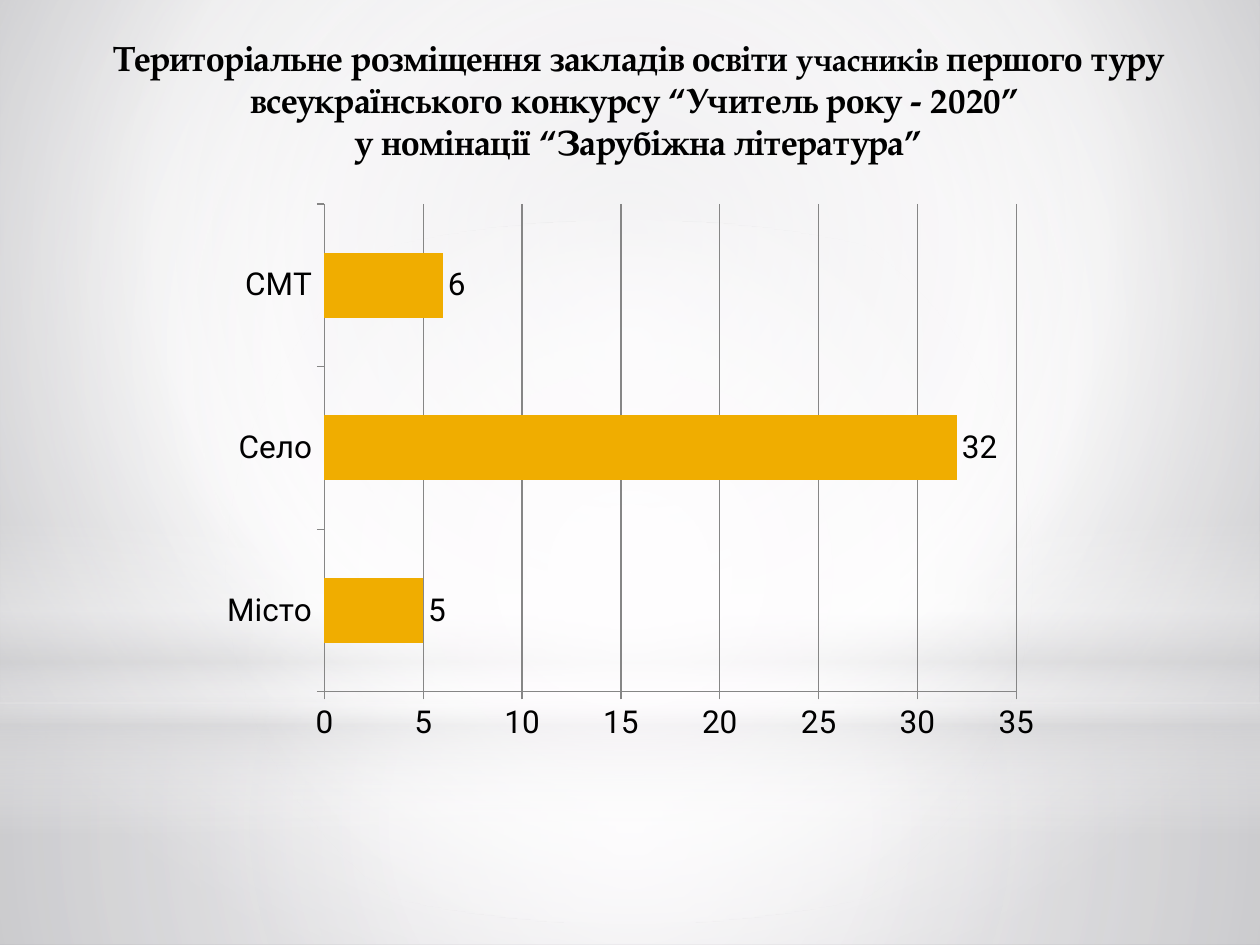
"""Build a slide with a bar chart of where the contest participants' schools are located."""
from dataclasses import dataclass

from lxml import etree
from pptx import Presentation
from pptx.chart.data import CategoryChartData
from pptx.dml.color import RGBColor
from pptx.enum.chart import XL_CHART_TYPE, XL_LABEL_POSITION, XL_TICK_MARK
from pptx.enum.shapes import MSO_SHAPE
from pptx.enum.text import MSO_ANCHOR, PP_ALIGN
from pptx.oxml.ns import qn
from pptx.util import Inches, Pt

RECTANGLE, OVAL = MSO_SHAPE.RECTANGLE, MSO_SHAPE.OVAL
BAR_CLUSTERED = XL_CHART_TYPE.BAR_CLUSTERED
OUTSIDE_END = XL_LABEL_POSITION.OUTSIDE_END
TICK_OUTSIDE, TICK_NONE = XL_TICK_MARK.OUTSIDE, XL_TICK_MARK.NONE
CENTER, MIDDLE = PP_ALIGN.CENTER, MSO_ANCHOR.MIDDLE

BLACK = RGBColor(0x00, 0x00, 0x00)
WHITE = RGBColor(0xFF, 0xFE, 0xFF)
PURE_WHITE = RGBColor(0xFF, 0xFF, 0xFF)
SILVER = RGBColor(0xD4, 0xD4, 0xD6)
LIGHT_GRAY = RGBColor(0xCB, 0xCB, 0xCE)
DARK_GRAY = RGBColor(0xA9, 0xA9, 0xAE)
AXIS_GRAY = RGBColor(0x86, 0x86, 0x86)
AMBER = RGBColor(0xF0, 0xAD, 0x00)

TITLE_FONT, CHART_FONT = "TeX Gyre Pagella", "Roboto"
WIDTH, HEIGHT = Inches(10), Inches(7.5)
CENTER_FOCUS = (50, 50, 50, 50)


@dataclass(frozen=True)
class Stop:
    """A gradient stop; position and opacity are percentages."""
    position: int
    color: RGBColor
    opacity: int = 100


@dataclass(frozen=True)
class Gradient:
    """A circular gradient around a focus, or a vertical one without it."""
    stops: tuple[Stop, ...]
    focus: tuple[int, int, int, int] | None = CENTER_FOCUS


@dataclass(frozen=True)
class Backdrop:
    """A full-width layer; top and height are shares of the slide height."""
    kind: int
    top: float
    height: float
    gradient: Gradient


@dataclass(frozen=True)
class TitlePart:
    """A piece of the title with its own size."""
    text: str
    size: int = 20
    breaks_after: bool = False


BACKGROUND = Gradient(
    (Stop(0, LIGHT_GRAY), Stop(60, PURE_WHITE), Stop(100, DARK_GRAY)), (20, 10, 20, 60))
BACKDROPS = (
    Backdrop(RECTANGLE, 0.744, 0.256, Gradient(
        (Stop(0, WHITE, 91), Stop(37, WHITE, 76), Stop(100, SILVER, 79)))),
    Backdrop(RECTANGLE, 0, 0.744, Gradient(
        (Stop(0, WHITE, 89), Stop(48, WHITE, 62), Stop(100, SILVER, 79)))),
    Backdrop(RECTANGLE, 0.55, 0.333, Gradient(
        (Stop(0, WHITE, 0), Stop(29, WHITE, 30), Stop(45, SILVER, 40),
         Stop(55, WHITE, 26), Stop(65, SILVER, 60), Stop(100, WHITE, 0)), None)),
    Backdrop(OVAL, 0.233, 0.744, Gradient((Stop(0, WHITE), Stop(56, WHITE, 0)))),
)
TITLE_PARTS = (
    TitlePart("Територіальне розміщення закладів освіти "),
    TitlePart("учасників", 18),
    TitlePart(" першого туру всеукраїнського конкурсу “Учитель року - 2020” ",
              breaks_after=True),
    TitlePart("у номінації “Зарубіжна література”"),
)
SCHOOLS = {"Місто": 5, "Село": 32, "СМТ": 6}


def place(shape, left: float, top: float, width: float, height: float) -> None:
    """Position a shape by shares of the slide size."""
    shape.left, shape.width = int(WIDTH * left), int(WIDTH * width)
    shape.top, shape.height = int(HEIGHT * top), int(HEIGHT * height)


def apply_gradient(fill, owner, gradient: Gradient) -> None:
    """Give the fill inside the owner element the described gradient."""
    fill.gradient()
    element = owner.find(f".//{qn('a:gradFill')}")
    for child in list(element):
        element.remove(child)
    stop_list = etree.SubElement(element, qn("a:gsLst"))
    for stop in gradient.stops:
        entry = etree.SubElement(stop_list, qn("a:gs"), pos=str(stop.position * 1000))
        color = etree.SubElement(entry, qn("a:srgbClr"), val=str(stop.color))
        if stop.opacity < 100:
            etree.SubElement(color, qn("a:alpha"), val=str(stop.opacity * 1000))
    if gradient.focus is None:
        etree.SubElement(element, qn("a:lin"), ang="5400000", scaled="0")
        return
    shading = etree.SubElement(element, qn("a:path"), path="circle")
    edges = {edge: str(share * 1000) for edge, share in zip("ltrb", gradient.focus)}
    etree.SubElement(shading, qn("a:fillToRect"), **edges)


def draw_backdrop(slide, backdrop: Backdrop) -> None:
    """Draw one translucent layer."""
    shape = slide.shapes.add_shape(backdrop.kind, 0, 0, WIDTH, HEIGHT)
    place(shape, 0, backdrop.top, 1, backdrop.height)
    shape.shadow.inherit = False
    shape.line.fill.background()
    apply_gradient(shape.fill, shape._element.spPr, backdrop.gradient)


def write_title(slide) -> None:
    """Fill the title placeholder and bring it above the layers."""
    title = slide.shapes.title
    slide.shapes._spTree.append(title._element)
    place(title, 0.055, 0.033, 0.904, 0.144)
    title.text_frame.word_wrap = True
    title.text_frame.vertical_anchor = MIDDLE
    paragraph = title.text_frame.paragraphs[0]
    paragraph.alignment = CENTER
    for part in TITLE_PARTS:
        run = paragraph.add_run()
        run.text = part.text
        run.font.name, run.font.size = TITLE_FONT, Pt(part.size)
        run.font.bold = True
        run.font.color.rgb = BLACK
        if part.breaks_after:
            paragraph.add_line_break()


def draw_chart(slide) -> None:
    """Draw the bar chart of school locations."""
    data = CategoryChartData()
    data.categories = list(SCHOOLS)
    data.add_series("Series 1", list(SCHOOLS.values()))
    frame = slide.shapes.add_chart(BAR_CLUSTERED, 0, 0, WIDTH, HEIGHT, data)
    place(frame, 0.167, 0.204, 0.667, 0.592)
    chart = frame.chart
    chart.has_legend = chart.has_title = False
    chart.font.name, chart.font.size = CHART_FONT, Pt(18)
    chart.font.color.rgb = BLACK
    for axis in (chart.category_axis, chart.value_axis):
        axis.major_tick_mark, axis.minor_tick_mark = TICK_OUTSIDE, TICK_NONE
        axis.format.line.color.rgb = AXIS_GRAY
    value_axis = chart.value_axis
    value_axis.minimum_scale, value_axis.maximum_scale = 0, 35
    value_axis.major_unit = 5
    value_axis.has_major_gridlines = True
    value_axis.major_gridlines.format.line.color.rgb = AXIS_GRAY
    plot = chart.plots[0]
    plot.gap_width, plot.vary_by_categories = 150, False
    plot.has_data_labels = True
    plot.data_labels.show_value = True
    plot.data_labels.position = OUTSIDE_END
    bars = plot.series[0].format.fill
    bars.solid()
    bars.fore_color.rgb = AMBER


def main() -> None:
    """Build and save the presentation."""
    presentation = Presentation()
    presentation.slide_width, presentation.slide_height = WIDTH, HEIGHT
    slide = presentation.slides.add_slide(presentation.slide_layouts[5])
    apply_gradient(slide.background.fill, slide._element, BACKGROUND)
    for backdrop in BACKDROPS:
        draw_backdrop(slide, backdrop)
    write_title(slide)
    draw_chart(slide)
    presentation.save("out.pptx")


if __name__ == "__main__":
    main()
